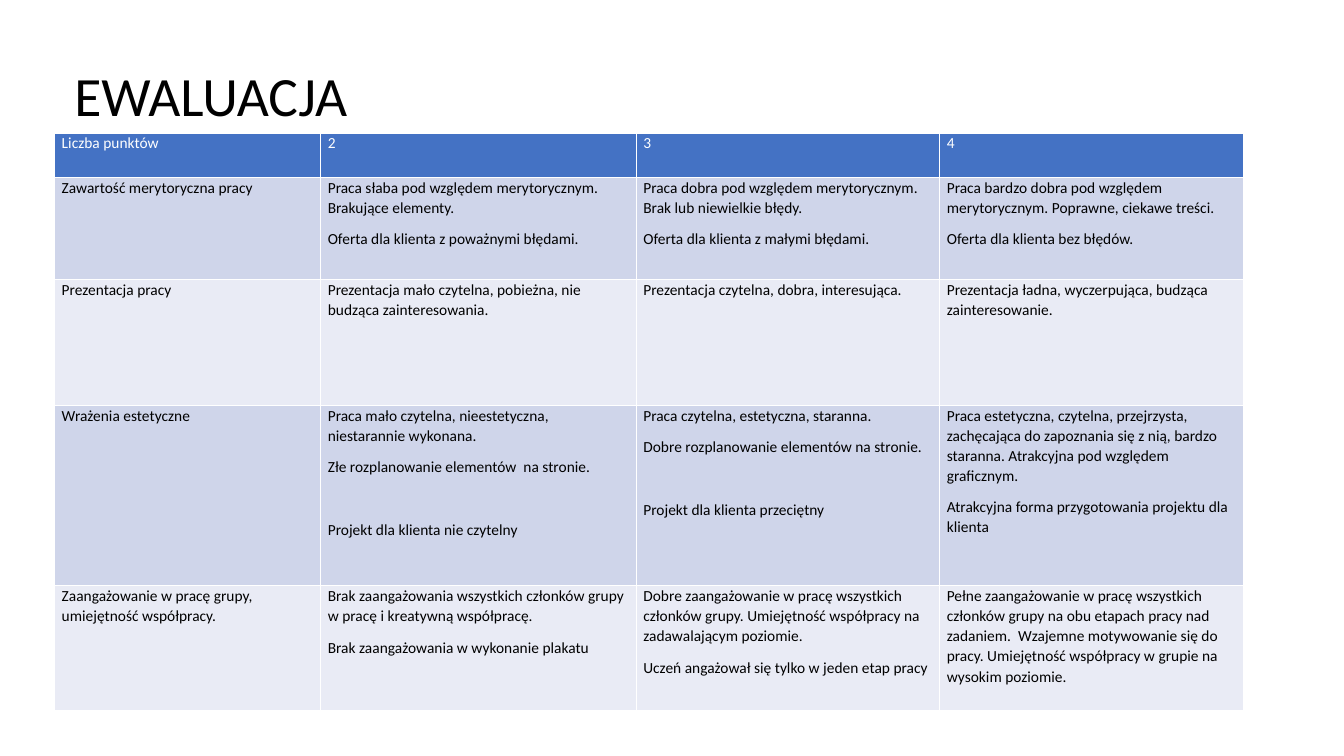
from dataclasses import dataclass

from pptx import Presentation
from pptx.dml.color import RGBColor
from pptx.enum.text import MSO_ANCHOR, PP_ALIGN
from pptx.util import Inches, Pt


@dataclass(frozen=True)
class Theme:
    font: str = "Calibri"
    title_size: float = 39.6
    body_size: float = 11
    dark: str = "000000"
    light: str = "FFFFFF"
    header: str = "4472C4"
    bands: tuple[str, str] = ("CFD5EA", "E9EBF5")


@dataclass(frozen=True)
class Entry:
    text: str
    space_before: float = 0


@dataclass(frozen=True)
class Criterion:
    height: float  # percent of the slide height
    cells: tuple[tuple[Entry, ...], ...]


THEME = Theme()
SLIDE_WIDTH, SLIDE_HEIGHT = Inches(13.33), Inches(7.5)
COLUMN_WIDTHS = (19.8, 23.48, 22.58, 22.58)  # percent of the slide width
SECTION_GAP = 22.3  # one line of body text with its spacing

CRITERIA = (
    Criterion(5.87, (
        (Entry("Liczba punktów"),), (Entry("2"),), (Entry("3"),), (Entry("4"),),
    )),
    Criterion(13.47, (
        (Entry("Zawartość merytoryczna pracy"),),
        (Entry("Praca słaba pod względem merytorycznym. Brakujące elementy."),
         Entry("Oferta dla klienta z poważnymi błędami.")),
        (Entry("Praca dobra pod względem merytorycznym. Brak lub niewielkie błędy."),
         Entry("Oferta dla klienta z małymi błędami.")),
        (Entry("Praca bardzo dobra pod względem merytorycznym. Poprawne, ciekawe treści."),
         Entry("Oferta dla klienta bez błędów.")),
    )),
    Criterion(16.67, (
        (Entry("Prezentacja pracy"),),
        (Entry("Prezentacja mało czytelna, pobieżna, nie budząca zainteresowania."),),
        (Entry("Prezentacja czytelna, dobra, interesująca."),),
        (Entry("Prezentacja ładna, wyczerpująca, budząca zainteresowanie."),),
    )),
    Criterion(23.87, (
        (Entry("Wrażenia estetyczne"),),
        (Entry("Praca mało czytelna, nieestetyczna, niestarannie wykonana."),
         Entry("Złe rozplanowanie elementów  na stronie."),
         Entry("Projekt dla klienta nie czytelny", SECTION_GAP)),
        (Entry("Praca czytelna, estetyczna, staranna."),
         Entry("Dobre rozplanowanie elementów na stronie."),
         Entry("Projekt dla klienta przeciętny", SECTION_GAP)),
        (Entry("Praca estetyczna, czytelna, przejrzysta, zachęcająca do zapoznania się z nią, "
               "bardzo staranna. Atrakcyjna pod względem graficznym."),
         Entry("Atrakcyjna forma przygotowania projektu dla klienta")),
    )),
    Criterion(16.53, (
        (Entry("Zaangażowanie w pracę grupy, umiejętność współpracy."),),
        (Entry("Brak zaangażowania wszystkich członków grupy w pracę i kreatywną współpracę."),
         Entry("Brak zaangażowania w wykonanie plakatu")),
        (Entry("Dobre zaangażowanie w pracę wszystkich członków grupy. "
               "Umiejętność współpracy na zadawalającym poziomie."),
         Entry("Uczeń angażował się tylko w jeden etap pracy")),
        (Entry("Pełne zaangażowanie w pracę wszystkich członków grupy na obu etapach pracy "
               "nad zadaniem.  Wzajemne motywowanie się do pracy. "
               "Umiejętność współpracy w grupie na wysokim poziomie."),),
    )),
)


def across(percent: float) -> int:
    return round(SLIDE_WIDTH * percent / 100)


def down(percent: float) -> int:
    return round(SLIDE_HEIGHT * percent / 100)


def apply_format(target: object, values: dict[str, object]) -> None:
    for name, value in values.items():
        setattr(target, name, value)


def write_paragraph(paragraph, text: str, size: float, color: str, layout: dict[str, object]) -> None:
    run = paragraph.add_run()
    run.text = text
    apply_format(paragraph, {"alignment": PP_ALIGN.LEFT, **layout})
    apply_format(run.font, {"name": THEME.font, "size": Pt(size), "bold": False})
    run.font.color.rgb = RGBColor.from_string(color)


def fill_cell(cell, entries: tuple[Entry, ...], fill: str, color: str) -> None:
    apply_format(cell, {
        "margin_left": Inches(0.07), "margin_right": Inches(0.07),
        "margin_top": 0, "margin_bottom": 0, "vertical_anchor": MSO_ANCHOR.TOP,
    })
    cell.fill.solid()
    cell.fill.fore_color.rgb = RGBColor.from_string(fill)
    for index, entry in enumerate(entries):
        frame = cell.text_frame
        paragraph = frame.add_paragraph() if index else frame.paragraphs[0]
        write_paragraph(paragraph, entry.text, THEME.body_size, color, {
            "line_spacing": 1.06, "space_after": Pt(8), "space_before": Pt(entry.space_before),
        })


def add_title(slide, text: str) -> None:
    shape = slide.shapes.add_textbox(across(4.8), down(10.27), across(90.47), down(5.6))
    apply_format(shape.text_frame, {"word_wrap": True, "vertical_anchor": MSO_ANCHOR.MIDDLE})
    write_paragraph(shape.text_frame.paragraphs[0], text, THEME.title_size, THEME.dark,
                    {"line_spacing": 0.9})


def add_evaluation_table(slide) -> None:
    height = sum(criterion.height for criterion in CRITERIA)
    table = slide.shapes.add_table(
        len(CRITERIA), len(COLUMN_WIDTHS),
        across(4.07), down(17.6), across(sum(COLUMN_WIDTHS)), down(height),
    ).table
    for column, width in zip(table.columns, COLUMN_WIDTHS):
        column.width = across(width)
    for index, (row, criterion) in enumerate(zip(table.rows, CRITERIA)):
        row.height = down(criterion.height)
        fill = THEME.bands[(index - 1) % 2] if index else THEME.header
        color = THEME.dark if index else THEME.light
        for cell, entries in zip(row.cells, criterion.cells):
            fill_cell(cell, entries, fill, color)


def main() -> None:
    presentation = Presentation()
    apply_format(presentation, {"slide_width": SLIDE_WIDTH, "slide_height": SLIDE_HEIGHT})
    slide = presentation.slides.add_slide(presentation.slide_layouts[6])

    # Heading
    add_title(slide, "EWALUACJA")

    # Scoring criteria
    add_evaluation_table(slide)

    presentation.save("out.pptx")


if __name__ == "__main__":
    main()
